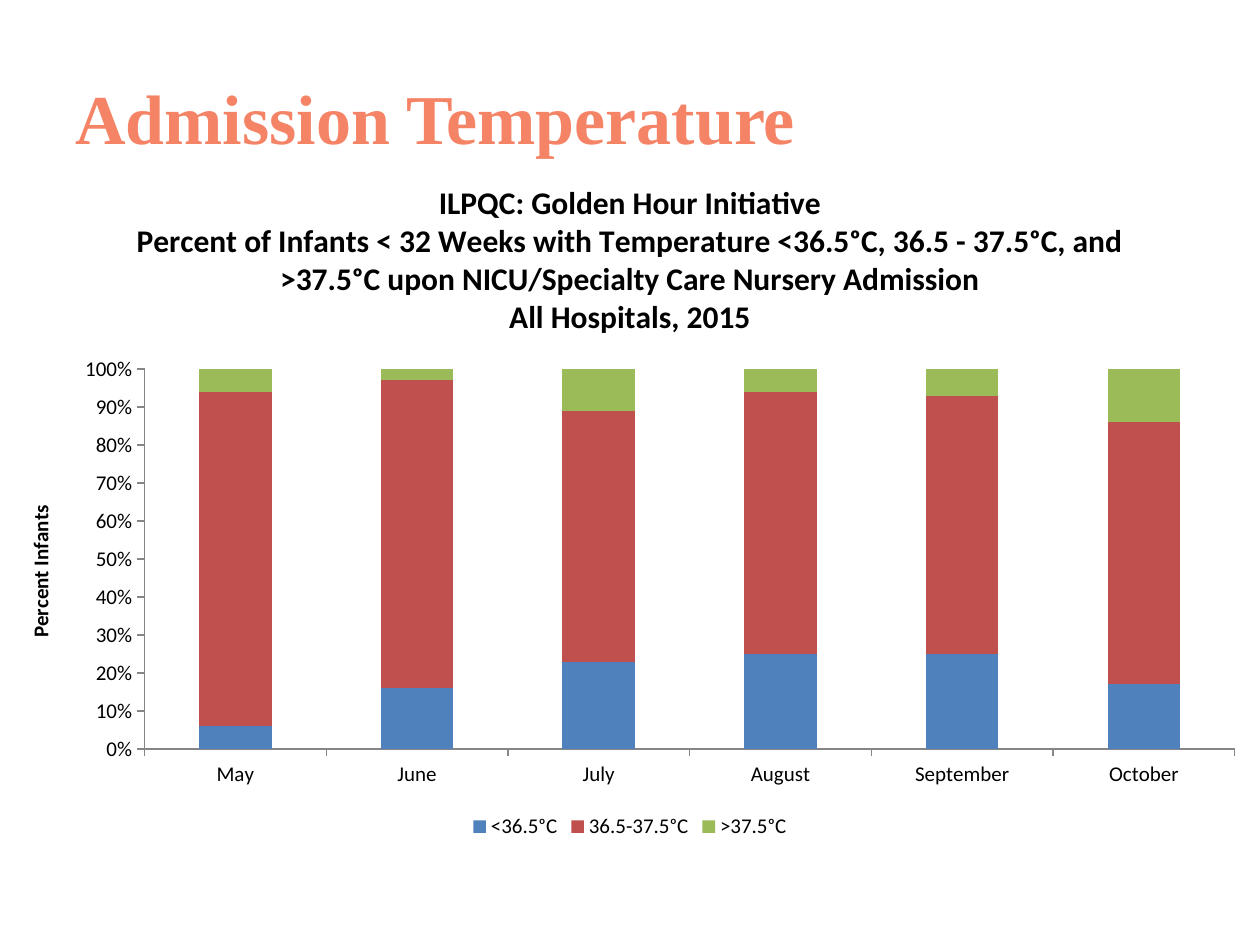
from dataclasses import dataclass

from pptx import Presentation
from pptx.chart.data import CategoryChartData
from pptx.dml.color import RGBColor
from pptx.enum.chart import XL_CHART_TYPE, XL_LEGEND_POSITION, XL_TICK_MARK
from pptx.enum.text import MSO_ANCHOR
from pptx.util import Pt

STACKED_100 = XL_CHART_TYPE.COLUMN_STACKED_100
LEGEND_BOTTOM = XL_LEGEND_POSITION.BOTTOM
TICK_OUTSIDE = XL_TICK_MARK.OUTSIDE
TICK_NONE = XL_TICK_MARK.NONE
ANCHOR_MIDDLE = MSO_ANCHOR.MIDDLE

COLORS = {
    "heading": "F58466",
    "text": "000000",
    "axis": "868686",
    "cold": "4F81BD",
    "normal": "C0504D",
    "warm": "9BBB59",
}
MONTHS = ["May", "June", "July", "August", "September", "October"]
CHART_TITLE = (
    "ILPQC: Golden Hour Initiative\n"
    "Percent of Infants < 32 Weeks with Temperature <36.5ᵒC, 36.5 - 37.5ᵒC, and "
    ">37.5ᵒC upon NICU/Specialty Care Nursery Admission\n"
    "All Hospitals, 2015"
)


@dataclass
class TemperatureBand:
    label: str
    percents: list[int]
    color: str


BANDS = [
    TemperatureBand("<36.5ᵒC", [6, 16, 23, 25, 25, 17], "cold"),
    TemperatureBand("36.5-37.5ᵒC", [88, 81, 66, 69, 68, 69], "normal"),
    TemperatureBand(">37.5ᵒC", [6, 3, 11, 6, 7, 14], "warm"),
]


def rgb(name: str) -> RGBColor:
    return RGBColor.from_string(COLORS[name])


def style_font(font, size: float, bold: bool = False, color: str = "text",
               family: str = "Calibri") -> None:
    font.name = family
    font.size = Pt(size)
    font.bold = bold
    font.color.rgb = rgb(color)


def set_title(owner, text: str, size: float) -> None:
    """Give a chart or an axis a bold title."""
    owner.has_title = True
    frame = (owner.chart_title if hasattr(owner, "chart_title") else owner.axis_title).text_frame
    frame.text = text
    for paragraph in frame.paragraphs:
        for run in paragraph.runs:
            style_font(run.font, size, bold=True)


def style_axis(axis) -> None:
    axis.has_major_gridlines = False
    axis.major_tick_mark = TICK_OUTSIDE
    axis.minor_tick_mark = TICK_NONE
    axis.format.line.color.rgb = rgb("axis")
    axis.format.line.width = Pt(0.75)
    style_font(axis.tick_labels.font, 12)


def add_heading(slide) -> None:
    heading = slide.shapes.add_textbox(Pt(36), Pt(21.6), Pt(648), Pt(90))
    frame = heading.text_frame
    frame.word_wrap = True
    frame.vertical_anchor = ANCHOR_MIDDLE
    frame.text = "Admission Temperature"
    style_font(frame.paragraphs[0].runs[0].font, 40, True, "heading", "Times New Roman")


def add_temperature_chart(slide) -> None:
    data = CategoryChartData(number_format="General")
    data.categories = MONTHS
    for band in BANDS:
        data.add_series(band.label, band.percents)
    chart = slide.shapes.add_chart(
        STACKED_100, Pt(0), Pt(90), Pt(720), Pt(392.4), data).chart
    style_font(chart.font, 10)
    set_title(chart, CHART_TITLE, 18)

    plot = chart.plots[0]
    plot.vary_by_categories = False
    plot.gap_width = 150
    plot.overlap = 100
    for series, band in zip(plot.series, BANDS):
        series.format.fill.solid()
        series.format.fill.fore_color.rgb = rgb(band.color)

    style_axis(chart.category_axis)
    percent_axis = chart.value_axis
    style_axis(percent_axis)
    percent_axis.tick_labels.number_format = "0%"
    percent_axis.tick_labels.number_format_is_linked = False
    set_title(percent_axis, "Percent Infants", 12)

    chart.has_legend = True
    chart.legend.position = LEGEND_BOTTOM
    chart.legend.include_in_layout = False
    style_font(chart.legend.font, 12)


def main() -> None:
    deck = Presentation()
    deck.slide_width = Pt(720)
    deck.slide_height = Pt(540)
    slide = deck.slides.add_slide(deck.slide_layouts[6])
    add_heading(slide)
    add_temperature_chart(slide)
    deck.save("out.pptx")


if __name__ == "__main__":
    main()
